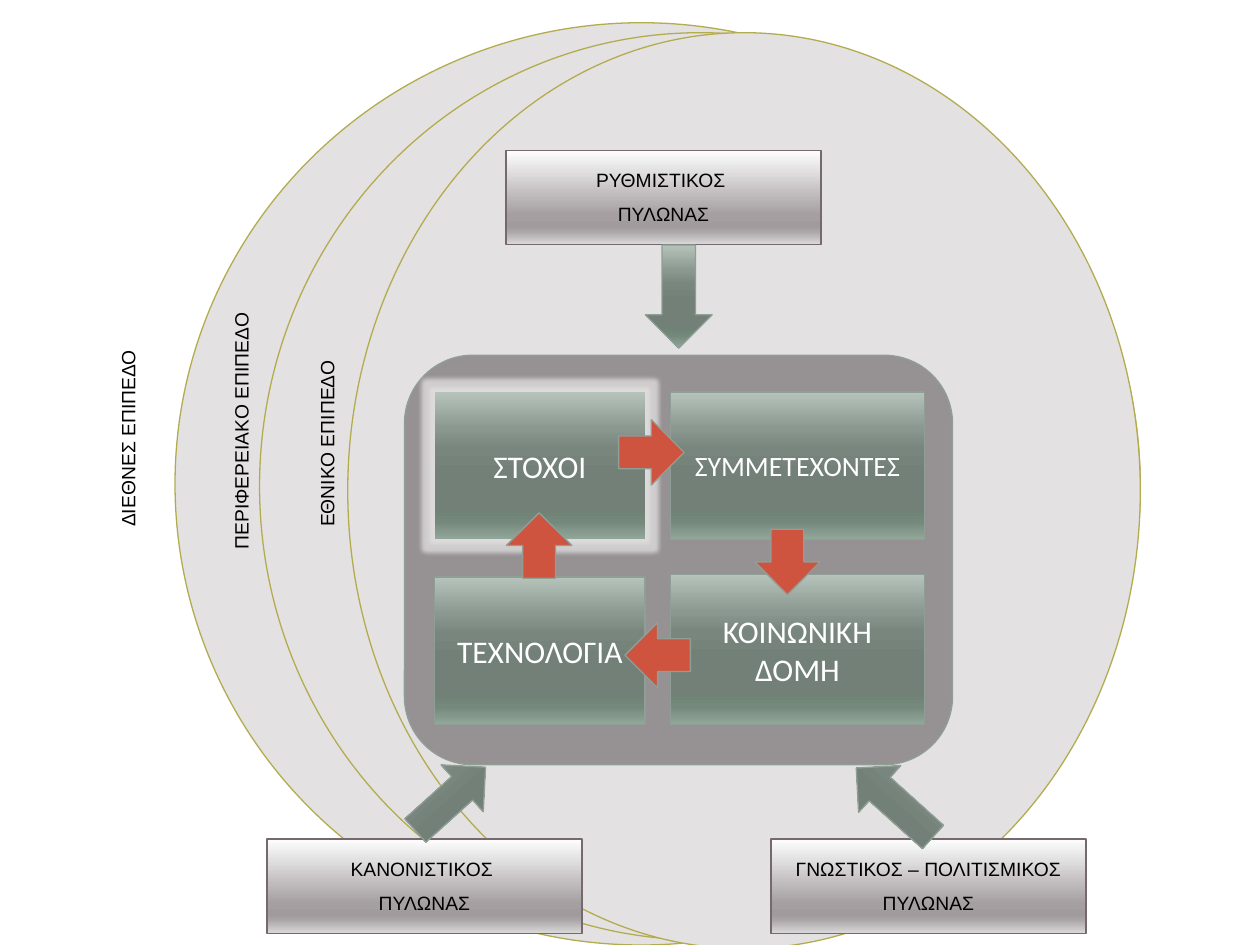
from lxml import etree
from pptx import Presentation
from pptx.dml.color import RGBColor
from pptx.enum.shapes import MSO_SHAPE
from pptx.enum.text import MSO_ANCHOR, PP_ALIGN
from pptx.oxml.ns import qn
from pptx.util import Pt

OVAL, RECT, ROUNDED = MSO_SHAPE.OVAL, MSO_SHAPE.RECTANGLE, MSO_SHAPE.ROUNDED_RECTANGLE
RIGHT, LEFT = MSO_SHAPE.RIGHT_ARROW, MSO_SHAPE.LEFT_ARROW
UP, DOWN = MSO_SHAPE.UP_ARROW, MSO_SHAPE.DOWN_ARROW
CENTER, JUSTIFY = PP_ALIGN.CENTER, PP_ALIGN.JUSTIFY
TOP, MIDDLE = MSO_ANCHOR.TOP, MSO_ANCHOR.MIDDLE

SILVER = [(0, "FEFEFE"), (68, "A59FA1"), (81, "A19B9E"), (86, "ABA6A8"), (100, "DCDADB")]
GREEN = [(0, "B6C3BB"), (25, "8B9890"), (38, "79867E"), (55, "728078"),
         (80, "708176"), (88, "75887C"), (100, "91A79A")]
GREEN_LINE = "8F9F96"
PILLAR_TEXT = dict(font="Arial", size=11, color="000000", spacing=1.5, after=6)

deck = Presentation()
deck.slide_width, deck.slide_height = Pt(720), Pt(540)
slide = deck.slides.add_slide(deck.slide_layouts[6])


def add_shape(kind, left, top, width, height, fill, line=None, rotation=0):
    """Add a shape; fill is a hex colour or a list of (percent, hex) stops running downwards."""
    shape = slide.shapes.add_shape(kind, Pt(left), Pt(top), Pt(width), Pt(height))
    shape.shadow.inherit = False
    shape.rotation = rotation
    if isinstance(fill, str):
        shape.fill.solid()
        shape.fill.fore_color.rgb = RGBColor.from_string(fill)
    else:
        shape.fill.gradient()
        shape.fill.gradient_angle = 270
        stops = shape._element.spPr.find(".//" + qn("a:gsLst"))
        for stop in list(stops):
            stops.remove(stop)
        for percent, color in fill:
            stop = etree.SubElement(stops, qn("a:gs"), pos=str(percent * 1000))
            etree.SubElement(stop, qn("a:srgbClr"), val=color)
    if line:
        shape.line.color.rgb = RGBColor.from_string(line)
        shape.line.width = Pt(0.75)
    else:
        shape.line.fill.background()
    return shape


def write_text(box, text, font="Calibri", size=18, color="FFFFFF", align=CENTER,
               anchor=MIDDLE, spacing=None, after=None):
    frame = box.text_frame
    frame.word_wrap = True
    frame.vertical_anchor = anchor
    para = frame.paragraphs[0]
    para.text = text
    para.alignment = align
    if spacing:
        para.line_spacing = spacing
        para.space_after = Pt(after)
    for span in para.runs:
        span.font.name = font
        span.font.size = Pt(size)
        span.font.color.rgb = RGBColor.from_string(color)


# Nested levels
for left, top, width, height in [(100, 13, 533, 527), (148.3, 18.7, 503.3, 518.4),
                                 (198.7, 18.7, 452.9, 523.4)]:
    add_shape(OVAL, left, top, width, height, "E4E1E3", "B3AC4F")

for text, left, top, width, height in [
    ("ΠΕΡΙΦΕΡΕΙΑΚΟ ΕΠΙΠΕΔΟ", 121, 87.1, 39, 234),
    ("ΕΘΝΙΚΟ ΕΠΙΠΕΔΟ", 170, 74.2, 39.6, 234),
    ("ΔΙΕΘΝΕΣ ΕΠΙΠΕΔΟ", 56.2, 164.2, 113, 144),
]:
    label = slide.shapes.add_textbox(Pt(left), Pt(top), Pt(width), Pt(height))
    write_text(label, text, align=JUSTIFY, anchor=TOP, **PILLAR_TEXT)
    label.text_frame._txBody.bodyPr.set("vert", "vert270")

# Pillars and the arrows leading from them to the panel
for text, left, top in [
    ("ΚΑΝΟΝΙΣΤΙΚΟΣ \vΠΥΛΩΝΑΣ", 152.6, 479.5),
    ("ΓΝΩΣΤΙΚΟΣ – ΠΟΛΙΤΙΣΜΙΚΟΣ ΠΥΛΩΝΑΣ", 440.6, 479.5),
    ("ΡΥΘΜΙΣΤΙΚΟΣ \vΠΥΛΩΝΑΣ", 289.2, 85.9),
]:
    pillar = add_shape(RECT, left, top, 180, 54, SILVER, "76696E")
    write_text(pillar, text, anchor=TOP, **PILLAR_TEXT)

for kind, left, top, width, height, rotation in [
    (DOWN, 368.8, 140, 38.2, 59, 0),
    (RIGHT, 230.4, 438.5, 54, 36, 318),
    (LEFT, 481.7, 440.6, 59, 36, 42),
]:
    add_shape(kind, left, top, width, height, GREEN, GREEN_LINE, rotation)

# Panel with its four elements
panel = add_shape(ROUNDED, 231.1, 203, 313.2, 234, "3C3638", GREEN_LINE)
panel_color = panel._element.spPr.find(qn("a:solidFill"))[0]
etree.SubElement(panel_color, qn("a:alpha"), val="46000")

for text, left, top, width, height, size, line in [
    ("ΚΟΙΝΩΝΙΚΗ ΔΟΜΗ", 383, 328.3, 145.4, 85.7, 18, GREEN_LINE),
    ("ΣΥΜΜΕΤΕΧΟΝΤΕΣ", 383, 224, 145.4, 84.2, 16, GREEN_LINE),
    ("ΤΕΧΝΟΛΟΓΙΑ", 248.4, 329.8, 120.2, 84.2, 18, GREEN_LINE),
    ("ΣΤΟΧΟΙ", 248.4, 224, 120.2, 84.2, 18, None),
]:
    element = add_shape(RECT, left, top, width, height, GREEN, line)
    write_text(element, text, size=size)

# The goals element, added last, glows
effects = element._element.spPr.find(qn("a:effectLst"))
glow = etree.SubElement(effects, qn("a:glow"), rad=str(Pt(5)))
glow_color = etree.SubElement(glow, qn("a:srgbClr"), val="E4E1E3")
etree.SubElement(glow_color, qn("a:alpha"), val="75000")

# Cycle between the elements
for kind, left, top in [(RIGHT, 353.5, 239.8), (LEFT, 357.1, 355.7),
                        (DOWN, 431.3, 302.4), (UP, 289.4, 293)]:
    add_shape(kind, left, top, 37.4, 37.4, "CF543F", GREEN_LINE)

deck.save("out.pptx")
